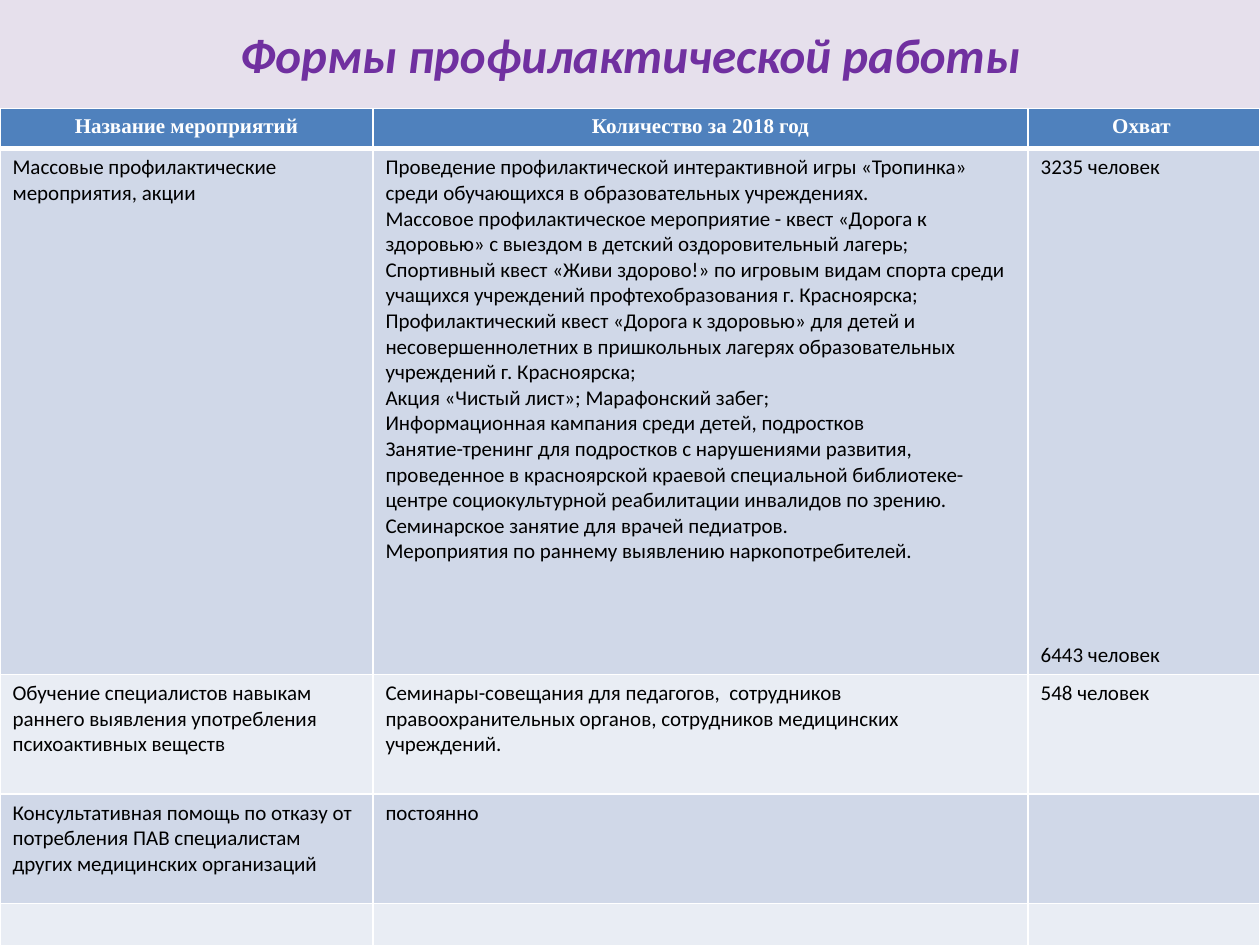
from lxml import etree
from pptx import Presentation
from pptx.dml.color import RGBColor
from pptx.enum.shapes import MSO_SHAPE
from pptx.enum.text import MSO_ANCHOR, PP_ALIGN
from pptx.oxml.ns import qn
from pptx.util import Inches, Pt

RECTANGLE = MSO_SHAPE.RECTANGLE
MIDDLE = MSO_ANCHOR.MIDDLE
CENTER, LEFT = PP_ALIGN.CENTER, PP_ALIGN.LEFT

COLORS = {
    "background": "EEECE1",
    "title_band": "E6E0EC",
    "title": "7030A0",
    "header": "4F81BD",
    "odd_row": "D0D8E8",
    "even_row": "E9EDF4",
    "white": "FFFFFF",
    "black": "000000",
}
TITLE_HEIGHT = 0.86
COLUMN_WIDTHS = [2.96, 5.2, 1.84]
ROW_HEIGHTS = [0.32, 4.15, 0.95, 0.87, 0.46]
COVERAGE_GAP = 264

MASS_EVENTS = [
    "Проведение профилактической интерактивной игры «Тропинка»  среди обучающихся в образовательных учреждениях.",
    "Массовое профилактическое мероприятие - квест «Дорога к здоровью» с выездом в детский оздоровительный лагерь;",
    "Спортивный квест «Живи здорово!» по игровым видам спорта среди учащихся учреждений профтехобразования г. Красноярска;",
    "Профилактический квест «Дорога к здоровью» для детей и несовершеннолетних в пришкольных лагерях образовательных учреждений г. Красноярска;",
    "Акция «Чистый лист»; Марафонский забег;",
    "Информационная кампания среди детей, подростков",
    "Занятие-тренинг для подростков с нарушениями развития, проведенное в красноярской краевой специальной библиотеке-центре социокультурной реабилитации инвалидов по зрению.",
    "Семинарское занятие для врачей педиатров.",
    "Мероприятия по раннему выявлению наркопотребителей.",
]
ROWS = [
    ["Название мероприятий", "Количество за 2018 год", "Охват "],
    [
        "Массовые профилактические мероприятия, акции",
        "\n".join(MASS_EVENTS),
        "3235 человек\n6443 человек",
    ],
    [
        "Обучение специалистов навыкам раннего выявления употребления психоактивных веществ",
        "Семинары-совещания для педагогов,  сотрудников правоохранительных органов, сотрудников медицинских учреждений.",
        "548 человек",
    ],
    [
        "Консультативная помощь по отказу от потребления ПАВ специалистам других медицинских организаций",
        "постоянно",
        "",
    ],
    ["", "", ""],
]


def format_text(text_frame, font_name, size, color, bold, alignment):
    for paragraph in text_frame.paragraphs:
        paragraph.alignment = alignment
        for run in paragraph.runs:
            run.font.name = font_name
            run.font.size = Pt(size)
            run.font.bold = bold
            run.font.color.rgb = RGBColor.from_string(COLORS[color])


def format_cell(cell, fill, bottom_width):
    properties = cell._tc.get_or_add_tcPr()
    for side, width in [("lnL", 1), ("lnR", 1), ("lnT", 1), ("lnB", bottom_width)]:
        line = etree.SubElement(properties, qn(f"a:{side}"), w=str(Pt(width)))
        solid_fill = etree.SubElement(line, qn("a:solidFill"))
        etree.SubElement(solid_fill, qn("a:srgbClr"), val=COLORS["white"])
    cell.fill.solid()
    cell.fill.fore_color.rgb = RGBColor.from_string(COLORS[fill])


presentation = Presentation()
presentation.slide_width = Inches(10)
presentation.slide_height = Inches(7.5)
slide = presentation.slides.add_slide(presentation.slide_layouts[6])
slide.background.fill.solid()
slide.background.fill.fore_color.rgb = RGBColor.from_string(COLORS["background"])

title = slide.shapes.add_shape(
    RECTANGLE, 0, 0, presentation.slide_width, Inches(TITLE_HEIGHT)
)
title.shadow.inherit = False
title.fill.solid()
title.fill.fore_color.rgb = RGBColor.from_string(COLORS["title_band"])
title.line.fill.background()
title.text_frame.text = "Формы профилактической работы"
title.text_frame.vertical_anchor = MIDDLE
format_text(title.text_frame, "Calibri", 28, "title", True, CENTER)
title.text_frame.paragraphs[0].runs[0].font.italic = True

table = slide.shapes.add_table(
    len(ROW_HEIGHTS),
    len(COLUMN_WIDTHS),
    0,
    Inches(TITLE_HEIGHT),
    presentation.slide_width,
    Inches(sum(ROW_HEIGHTS)),
).table
for column, width in zip(table.columns, COLUMN_WIDTHS):
    column.width = Inches(width)

for row_index, (texts, height) in enumerate(zip(ROWS, ROW_HEIGHTS)):
    table.rows[row_index].height = Inches(height)
    is_header = row_index == 0
    row_fill = "header" if is_header else "odd_row" if row_index % 2 else "even_row"
    for column_index, text in enumerate(texts):
        cell = table.cell(row_index, column_index)
        cell.text_frame.text = text
        format_cell(cell, row_fill, 3 if is_header else 1)
        if is_header:
            format_text(cell.text_frame, "Times New Roman", 12, "white", True, CENTER)
        else:
            format_text(cell.text_frame, "Calibri", 12, "black", False, LEFT)

table.cell(1, 2).text_frame.paragraphs[1].space_before = Pt(COVERAGE_GAP)

presentation.save("out.pptx")
